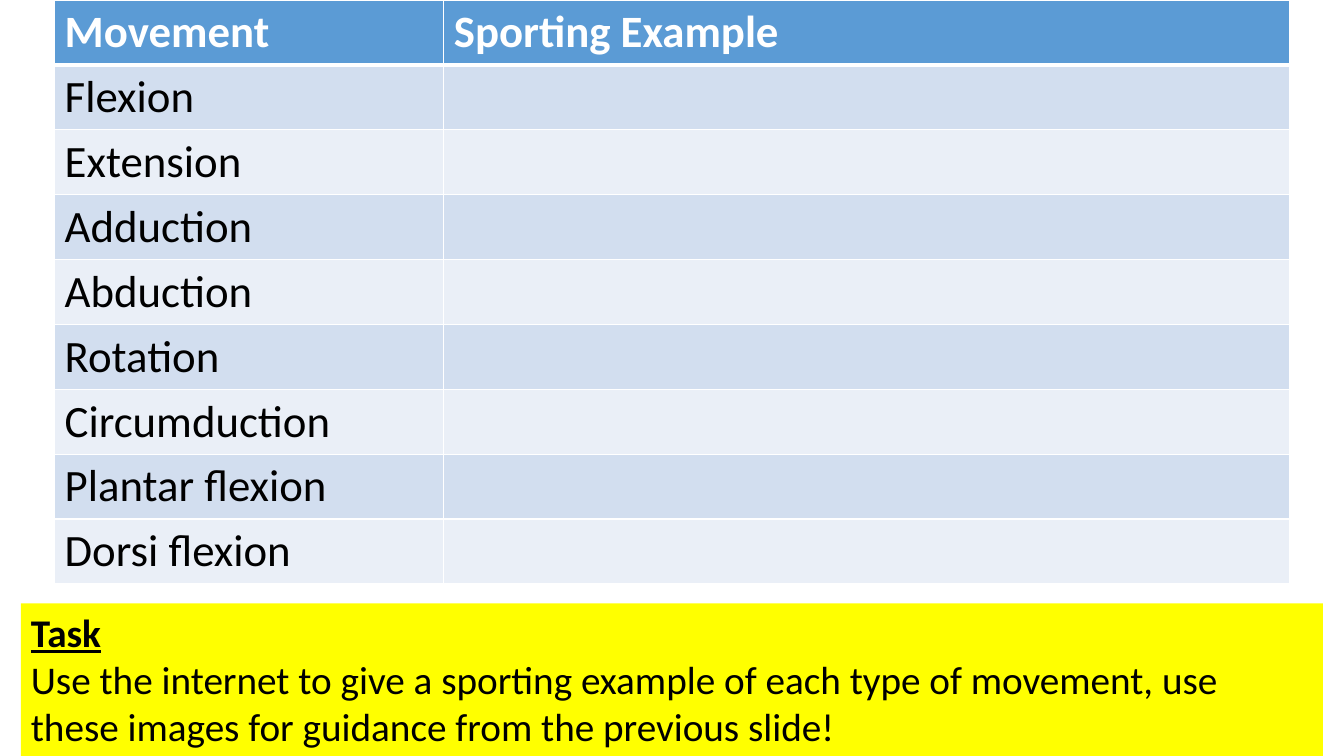
from lxml import etree
from pptx import Presentation
from pptx import util as u
from pptx.dml.color import RGBColor
from pptx.enum import text
from pptx.oxml import ns

Pt = u.Pt
WHITE = RGBColor(0xFF, 0xFF, 0xFF)
BLACK = RGBColor(0, 0, 0)
BLUE = RGBColor(0x5B, 0x9B, 0xD5)
BANDS = RGBColor(0xD2, 0xDE, 0xEF), RGBColor(0xEA, 0xEF, 0xF7)
YELLOW = RGBColor(0xFF, 0xFF, 0)

MOVES = ["Flexion", "Extension", "Adduction", "Abduction", "Rotation",
         "Circumduction", "Plantar flexion", "Dorsi flexion"]
TASK = ("Use the internet to give a sporting example of each type of movement, "
        "use these images for guidance from the previous slide!")


def write(para, words, size=28, color=BLACK, bold=False, line=False, face="Calibri"):
    """Add one formatted run to a paragraph."""
    run = para.add_run()
    run.text = words
    font = run.font
    font.name, font.size = face, Pt(size)
    font.bold, font.underline = bold, line
    font.color.rgb = color


def edge(cell, side, width):
    """Give one side of a cell a solid white border."""
    props = cell._tc.get_or_add_tcPr()
    rule = etree.SubElement(props, ns.qn("a:ln" + side), w=str(Pt(width)))
    fill = etree.SubElement(rule, ns.qn("a:solidFill"))
    etree.SubElement(fill, ns.qn("a:srgbClr"), val=str(WHITE))


class Deck:
    def __init__(self, wide, high):
        self.show = Presentation()
        self.show.slide_width, self.show.slide_height = Pt(wide), Pt(high)
        self.slide = self.show.slides.add_slide(self.show.slide_layouts[6])

    def table(self, rows, left, top, cols, high, size):
        frame = self.slide.shapes.add_table(
            len(rows), len(cols), Pt(left), Pt(top),
            Pt(sum(cols)), Pt(high * len(rows)))
        grid = frame.table
        for col, wide in zip(grid.columns, cols):
            col.width = Pt(wide)
        for r, row in enumerate(rows):
            grid.rows[r].height = Pt(high)
            head = r == 0
            for c, words in enumerate(row):
                cell = grid.cell(r, c)
                # Thick rule between the header and the first row
                for side in "LRTB":
                    thick = (r, side) in ((0, "B"), (1, "T"))
                    edge(cell, side, 3 if thick else 1)
                cell.fill.solid()
                cell.fill.fore_color.rgb = BLUE if head else BANDS[(r - 1) % 2]
                if words:
                    write(cell.text_frame.paragraphs[0], words, size=size,
                          color=WHITE if head else BLACK, bold=head)

    def box(self, left, top, wide, high, fill):
        shape = self.slide.shapes.add_textbox(Pt(left), Pt(top), Pt(wide), Pt(high))
        shape.fill.solid()
        shape.fill.fore_color.rgb = fill
        frame = shape.text_frame
        frame.word_wrap = True
        frame.auto_size = text.MSO_AUTO_SIZE.SHAPE_TO_FIT_TEXT
        return frame


def main():
    deck = Deck(960, 540)

    # Movement table
    rows = [("Movement", "Sporting Example")] + [(move, "") for move in MOVES]
    deck.table(rows, left=39, top=0, cols=(278, 604), high=46.3, size=32)

    # Task note
    note = deck.box(15, 431, 930, 109, YELLOW)
    write(note.paragraphs[0], "Task", bold=True, line=True)
    write(note.add_paragraph(), TASK)

    deck.show.save("out.pptx")


if __name__ == "__main__":
    main()
